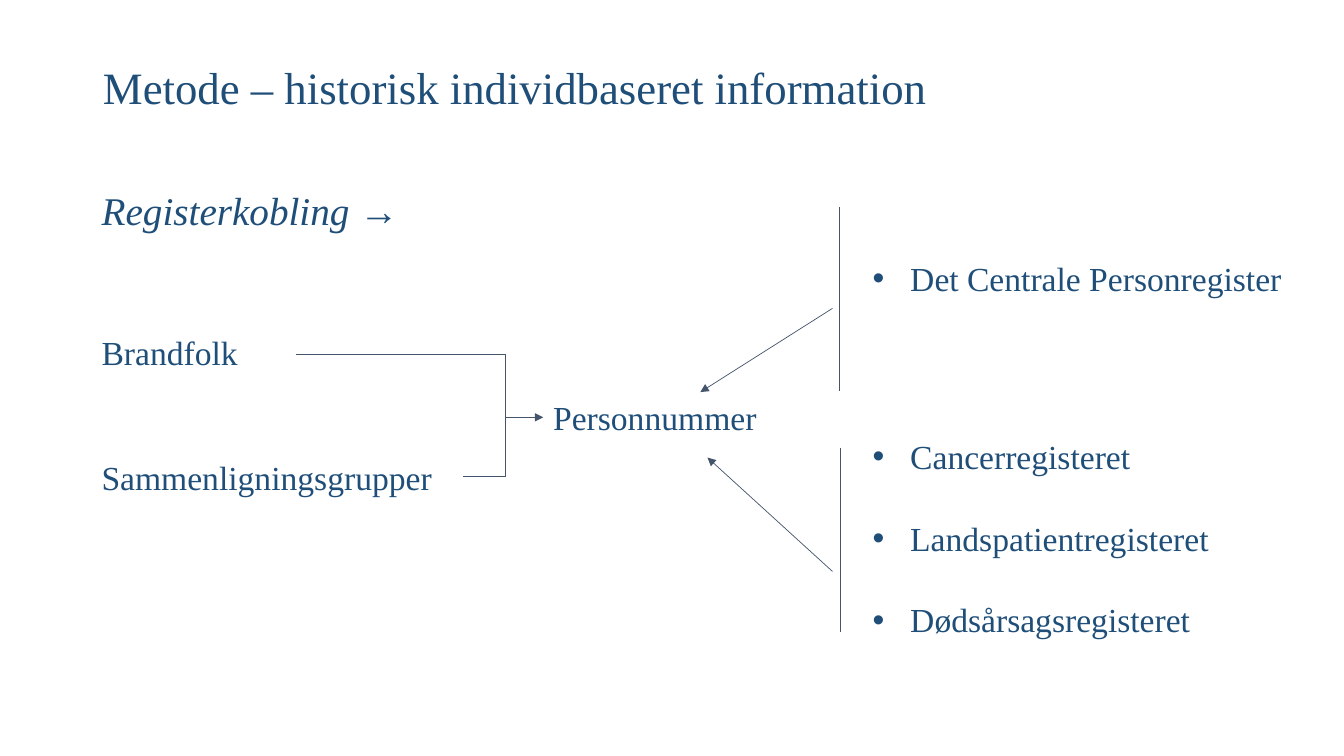
from pptx import Presentation
from pptx.dml.color import RGBColor
from pptx.enum.shapes import MSO_CONNECTOR
from pptx.enum.text import MSO_ANCHOR, MSO_AUTO_SIZE, PP_ALIGN
from pptx.oxml.ns import qn
from pptx.util import Cm, Pt
from lxml.etree import SubElement

TEXT_BLUE = RGBColor(0x1F, 0x4E, 0x79)
LINE_SLATE = RGBColor(0x44, 0x54, 0x6A)
FONT = "Times New Roman"

LABEL_LEFT = 2.31
LIST_LEFT = 21.74
LABEL_HEIGHT = 1.27
BRACKET_X = 12.74
BRACKET_TOP, BRACKET_BOTTOM = 8.94, 12.01
BAR_LENGTH = 4.65
ARROW_START_X = 20.98


def place(shape, left, top, width, height):
    shape.left, shape.top = Cm(left), Cm(top)
    shape.width, shape.height = Cm(width), Cm(height)


def format_para(para, size, italic=False):
    para.alignment = PP_ALIGN.LEFT
    for span in para.runs:
        span.font.name = FONT
        span.font.size = Pt(size)
        span.font.italic = italic
        span.font.color.rgb = TEXT_BLUE


def set_bullet(para, char=None, indent=0.0):
    """Give the paragraph a hanging bullet, or none when char is missing."""
    properties = para._p.get_or_add_pPr()
    properties.set("marL", str(Cm(indent)))
    properties.set("indent", str(-Cm(indent)))
    if char is None:
        SubElement(properties, qn("a:buNone"))
    else:
        SubElement(properties, qn("a:buFont"), typeface="Arial")
        SubElement(properties, qn("a:buChar"), char=char)


def fill_placeholder(placeholder, text, size, anchor, italic=False):
    frame = placeholder.text_frame
    frame.text = text
    frame.auto_size = MSO_AUTO_SIZE.NONE
    frame.vertical_anchor = anchor
    para = frame.paragraphs[0]
    para.line_spacing = 0.9
    para.space_before = Pt(0)
    format_para(para, size, italic)
    set_bullet(para)


def add_text_box(page, left, top, width, height):
    box = page.shapes.add_textbox(Cm(left), Cm(top), Cm(width), Cm(height))
    box.text_frame.word_wrap = True
    return box


def add_label(page, text, left, top, width):
    box = add_text_box(page, left, top, width, LABEL_HEIGHT)
    box.text_frame.text = text
    format_para(box.text_frame.paragraphs[0], 24)
    return box


def add_register_list(page, registers, top, width, height):
    frame = add_text_box(page, LIST_LEFT, top, width, height).text_frame
    frame.margin_top = Cm(1.13)
    frame.text = "\n".join(registers)
    for index, para in enumerate(frame.paragraphs):
        para.space_before = Pt(29.5 if index else 0)
        format_para(para, 24)
        set_bullet(para, "•", 0.95)


def add_line(page, start, end, arrow=False):
    line = page.shapes.add_connector(
        MSO_CONNECTOR.STRAIGHT, *(Cm(value) for value in (*start, *end)))
    line.line.color.rgb = LINE_SLATE
    line.line.width = Pt(0.5)
    if arrow:
        SubElement(line.line._get_or_add_ln(), qn("a:tailEnd"), type="triangle")
    SubElement(line._element.spPr, qn("a:effectLst"))
    return line


def add_bracket(page, person_number):
    """Join the two groups and point from them to the person number."""
    add_line(page, (BRACKET_X, BRACKET_TOP), (BRACKET_X, BRACKET_BOTTOM))
    for start_x, y in ((7.47, BRACKET_TOP), (11.68, BRACKET_BOTTOM)):
        add_line(page, (start_x, y), (BRACKET_X, y))
    middle = (person_number.top + person_number.height / 2) / Cm(1)
    arrow = add_line(page, (BRACKET_X, middle), (13.69, middle), arrow=True)
    arrow.end_connect(person_number, 1)


def main():
    deck = Presentation()
    deck.slide_width, deck.slide_height = Cm(33.87), Cm(19.05)
    page = deck.slides.add_slide(deck.slide_layouts[1])

    title, body = page.shapes.title, page.placeholders[1]
    place(title, 2.34, 1.02, 29.21, 3.68)
    fill_placeholder(title, "Metode – historisk individbaseret information",
                     32, MSO_ANCHOR.MIDDLE)
    title.text_frame.margin_bottom = Cm(1.3)
    place(body, LABEL_LEFT, 4.7, 30.02, 11.89)
    fill_placeholder(body, "Registerkobling →", 28, MSO_ANCHOR.TOP, italic=True)

    add_label(page, "Brandfolk", LABEL_LEFT, 8.23, 7.47)
    add_label(page, "Sammenligningsgrupper", LABEL_LEFT, 11.38, 9.17)
    person_number = add_label(page, "Personnummer", 13.69, 9.88, 6.1)
    add_bracket(page, person_number)

    add_register_list(page, ["Det Centrale Personregister"], 5.36, 11.46, 2.31)
    add_register_list(
        page,
        ["Cancerregisteret", "Landspatientregisteret", "Dødsårsagsregisteret"],
        9.86, 10.74, 7.44)
    for x, top in ((21.16, 5.21), (21.18, 11.28)):
        add_line(page, (x, top), (x, top + BAR_LENGTH))
    for start_y, tip in ((7.77, (17.65, 9.88)), (14.4, (17.83, 11.53))):
        add_line(page, (ARROW_START_X, start_y), tip, arrow=True)

    deck.save("out.pptx")


if __name__ == "__main__":
    main()
